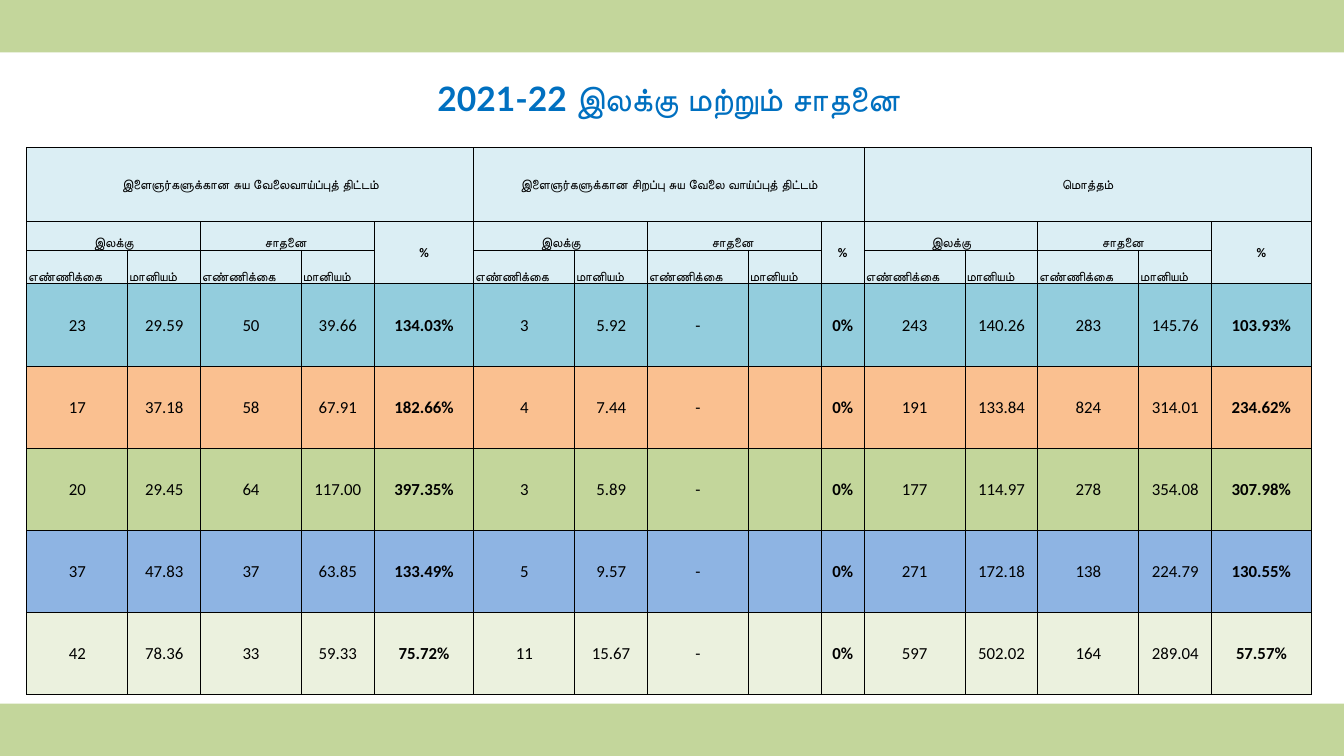
from lxml.etree import SubElement
from pptx import Presentation
from pptx.dml.color import RGBColor
from pptx.enum.shapes import MSO_SHAPE
from pptx.enum.text import MSO_ANCHOR, MSO_AUTO_SIZE, PP_ALIGN
from pptx.oxml.ns import qn
from pptx.util import Inches, Pt

WIDTH = Inches(10)
HEIGHT = WIDTH * 9 // 16

BLACK = RGBColor(0x00, 0x00, 0x00)
TITLE_BLUE = RGBColor(0x00, 0x70, 0xC0)
BAND_GREEN = RGBColor(0xC3, 0xD6, 0x9B)
HEADER_BLUE = RGBColor(0xDB, 0xEE, 0xF4)
AQUA = RGBColor(0x93, 0xCD, 0xDD)
ORANGE = RGBColor(0xFA, 0xC0, 0x90)
PERIWINKLE = RGBColor(0x8E, 0xB4, 0xE3)
PALE_GREEN = RGBColor(0xEB, 0xF1, 0xDE)

TITLE = "2021-22 இலக்கு மற்றும் சாதனை"
SCHEMES = [
    "இளைஞர்களுக்கான சுய வேலைவாய்ப்புத் திட்டம்",
    "இளைஞர்களுக்கான சிறப்பு சுய வேலை வாய்ப்புத் திட்டம்",
    "மொத்தம்",
]
GROUPS = ["இலக்கு", "", "சாதனை ", "", "%"]
MEASURES = ["எண்ணிக்கை", "மானியம்"] * 2 + [""]
BLOCK = len(GROUPS)

YEAR_ROWS = [
    (AQUA, ["23", "29.59", "50", "39.66", "134.03%", "3", "5.92", "-", "", "0%",
            "243", "140.26", "283", "145.76", "103.93%"]),
    (ORANGE, ["17", "37.18", "58", "67.91", "182.66%", "4", "7.44", "-", "", "0%",
              "191", "133.84", "824", "314.01", "234.62%"]),
    (BAND_GREEN, ["20", "29.45", "64", "117.00", "397.35%", "3", "5.89", "-", "", "0%",
                  "177", "114.97", "278", "354.08", "307.98%"]),
    (PERIWINKLE, ["37", "47.83", "37", "63.85", "133.49%", "5", "9.57", "-", "", "0%",
                  "271", "172.18", "138", "224.79", "130.55%"]),
    (PALE_GREEN, ["42", "78.36", "33", "59.33", "75.72%", "11", "15.67", "-", "", "0%",
                  "597", "502.02", "164", "289.04", "57.57%"]),
]
PERCENT_WIDTHS = [0.74, 0.32, 0.74]
COLUMN_WEIGHTS = [w for percent in PERCENT_WIDTHS
                  for w in (0.75, 0.54, 0.75, 0.54, percent)]
ROW_WEIGHTS = [0.55, 0.21, 0.25] + [0.61] * len(YEAR_ROWS)


def write(frame, text, size=9, font="Calibri", color=BLACK, bold=False,
          align=PP_ALIGN.CENTER):
    paragraph = frame.paragraphs[0]
    paragraph.alignment = align
    run = paragraph.add_run()
    run.text = text
    run.font.size, run.font.name, run.font.bold = Pt(size), font, bold
    run.font.color.rgb = color


def share_out(tracks, weights, total, side):
    """Size rows or columns in proportion to their weights."""
    for track, weight in zip(tracks, weights):
        setattr(track, side, round(total * weight / sum(weights)))


def outline(cell, width=0.5, color=BLACK):
    properties = cell._tc.get_or_add_tcPr()
    for position, edge in enumerate(("a:lnL", "a:lnR", "a:lnT", "a:lnB")):
        line = SubElement(properties, qn(edge), w=str(Pt(width)))
        fill = SubElement(line, qn("a:solidFill"))
        SubElement(fill, qn("a:srgbClr"), val=str(color))
        properties.insert(position, line)


class SlideBuilder:
    """Places elements on one slide, with boxes given in inches."""

    def __init__(self, deck):
        self.slide = deck.slides.add_slide(deck.slide_layouts[5])

    def title(self, text, left, top, width, height):
        title = self.slide.shapes.title
        title.left, title.top = Inches(left), Inches(top)
        title.width, title.height = Inches(width), Inches(height)
        frame = title.text_frame
        frame.word_wrap = False
        frame.auto_size = MSO_AUTO_SIZE.SHAPE_TO_FIT_TEXT
        frame.vertical_anchor = MSO_ANCHOR.TOP
        write(frame, text, size=18, font="Lato", color=TITLE_BLUE, bold=True)

    def band(self, top, height):
        band = self.slide.shapes.add_shape(
            MSO_SHAPE.RECTANGLE, 0, top, WIDTH, height)
        band.shadow.inherit = False
        band.fill.solid()
        band.fill.fore_color.rgb = BAND_GREEN
        band.line.fill.background()

    def table(self, left, top, width, height):
        box = [Inches(length) for length in (left, top, width, height)]
        table = self.slide.shapes.add_table(
            len(ROW_WEIGHTS), len(COLUMN_WEIGHTS), *box).table
        table.first_row = table.horz_banding = False
        share_out(table.columns, COLUMN_WEIGHTS, box[2], "width")
        share_out(table.rows, ROW_WEIGHTS, box[3], "height")
        return table

    def cell(self, cell, text, fill, anchor=MSO_ANCHOR.MIDDLE, **style):
        cell.margin_left = cell.margin_right = cell.margin_top = Inches(0.01)
        cell.margin_bottom = 0
        cell.vertical_anchor = anchor
        cell.fill.solid()
        cell.fill.fore_color.rgb = fill
        outline(cell)
        write(cell.text_frame, text, **style)

    def header(self, table):
        style = dict(fill=HEADER_BLUE, size=7, bold=True)
        for block, scheme in enumerate(SCHEMES):
            first = block * BLOCK
            for offset, (group, measure) in enumerate(zip(GROUPS, MEASURES)):
                column = first + offset
                group_anchor = MSO_ANCHOR.MIDDLE if group == "%" else MSO_ANCHOR.BOTTOM
                self.cell(table.cell(0, column), "" if offset else scheme, **style)
                self.cell(table.cell(1, column), group, anchor=group_anchor, **style)
                self.cell(table.cell(2, column), measure, anchor=MSO_ANCHOR.BOTTOM,
                          align=PP_ALIGN.LEFT, **style)
            last = first + BLOCK - 1
            table.cell(0, first).merge(table.cell(0, last))
            for pair in (first, first + 2):
                table.cell(1, pair).merge(table.cell(1, pair + 1))
            table.cell(1, last).merge(table.cell(2, last))

    def body(self, table):
        header_rows = len(ROW_WEIGHTS) - len(YEAR_ROWS)
        for row, (fill, values) in enumerate(YEAR_ROWS, start=header_rows):
            for column, value in enumerate(values):
                self.cell(table.cell(row, column), value, fill, bold="%" in value)


def main():
    deck = Presentation()
    deck.slide_width, deck.slide_height = WIDTH, HEIGHT
    builder = SlideBuilder(deck)
    results = builder.table(0.2, 1.1, 9.56, 4.07)
    builder.header(results)
    builder.body(results)
    builder.title(TITLE, 2.58, 0.53, 4.79, 0.4)
    band_height = Inches(0.39)
    for top in (HEIGHT - band_height, 0):
        builder.band(top, band_height)
    deck.save("out.pptx")


if __name__ == "__main__":
    main()
